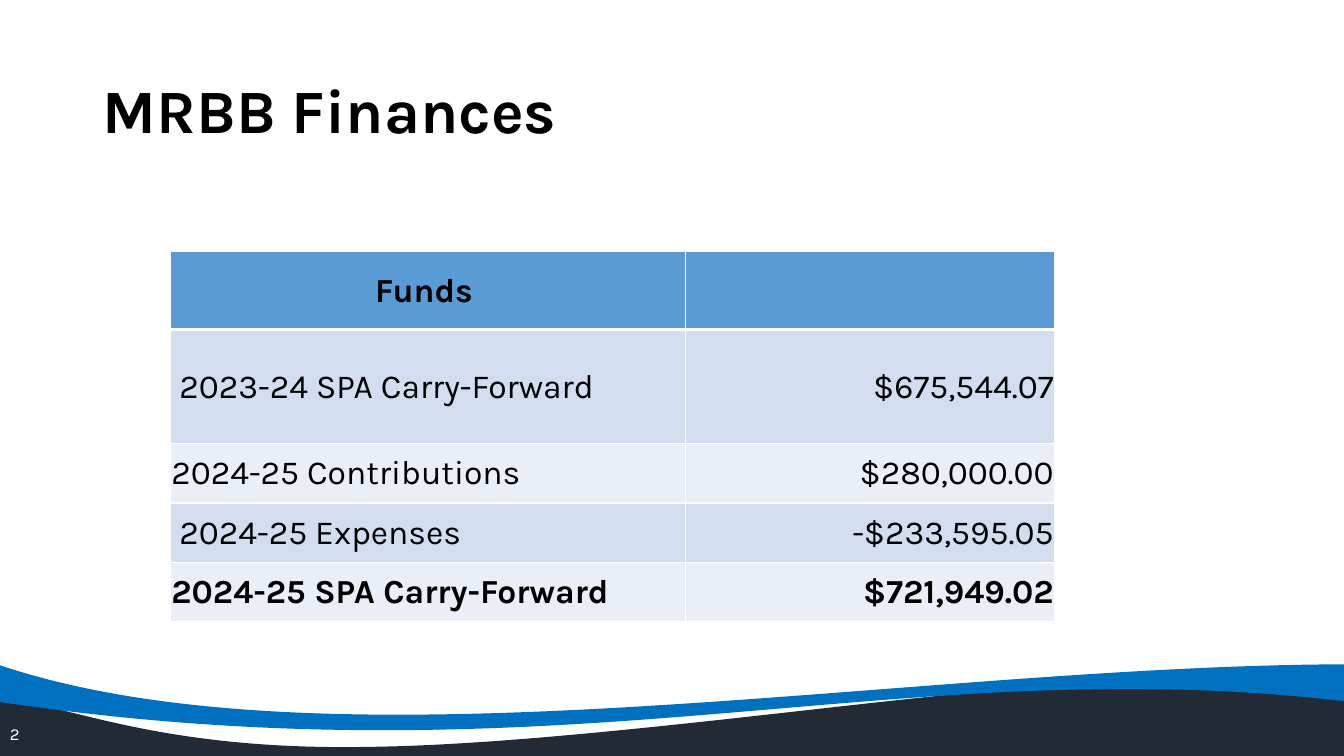
from lxml.etree import SubElement
from pptx import Presentation
from pptx.dml.color import RGBColor
from pptx.enum.text import MSO_ANCHOR, PP_ALIGN
from pptx.oxml.ns import qn
from pptx.util import Pt

PX = 9144  # 100 px to the inch
THEME = {
    "font": "Karla", "title": 44, "table": 24, "number": 12,
    "black": "000000", "white": "FFFFFF", "navy": "222A35", "blue": "0070C0",
    "header": "5B9BD5", "bands": ("D2DEEF", "EAEFF7"),
}


def add_run(p, text, size, color, bold=False):
    r = p.add_run()
    r.text = text
    r.font.name = THEME["font"]
    r.font.size = Pt(THEME[size])
    r.font.bold = bold
    r.font.color.rgb = RGBColor.from_string(THEME[color])


prs = Presentation()
prs.slide_width, prs.slide_height = 1333 * PX, 750 * PX
s = prs.slides.add_slide(prs.slide_layouts[5])

# Footer waves: box, then a start point, curves of three points and straight lines of one
waves = [
    ("navy", (-3, 660, 1339, 90), [
        [(-3, 695)],
        [(56, 692), (142, 745), (365, 741)],
        [(546, 739), (825, 699), (987, 685)],
        [(1149, 671), (1350, 648), (1336, 667)],
        [(1335, 695), (1335, 722), (1335, 750)],
        [(-2, 750)],
        [(-2, 732), (-3, 713), (-3, 695)],
    ]),
    ("blue", (-3, 659, 1339, 65), [
        [(-3, 659)],
        [(326, 771), (897, 660), (1336, 659)],
        [(1336, 696)],
        [(891, 643), (565, 781), (-3, 696)],
        [(-3, 659)],
    ]),
]
for color, (x, y, w, h), segments in waves:
    fb = s.shapes.build_freeform(x, y, scale=PX)
    fb.add_line_segments([(x + w, y), (x + w, y + h), (x, y + h)], close=True)
    wave = fb.convert_to_shape()
    wave.shadow.inherit = False
    wave.fill.solid()
    wave.fill.fore_color.rgb = RGBColor.from_string(THEME[color])
    wave.line.fill.background()

    # Curved outline inside the box
    outline = next(wave._element.iter(qn("a:path")))
    for step in list(outline):
        outline.remove(step)
    for i, seg in enumerate(segments):
        tag = "a:moveTo" if i == 0 else "a:cubicBezTo" if len(seg) == 3 else "a:lnTo"
        step = SubElement(outline, qn(tag))
        for px, py in seg:
            SubElement(step, qn("a:pt"), x=str(px - x), y=str(py - y))
    SubElement(outline, qn("a:close"))

# Title
title = s.shapes.title
title.left, title.top, title.width, title.height = 92 * PX, 40 * PX, 1150 * PX, 145 * PX
tf = title.text_frame
tf.vertical_anchor = MSO_ANCHOR.MIDDLE
p = tf.paragraphs[0]
p.alignment = PP_ALIGN.LEFT
p.line_spacing = 0.9
add_run(p, "MRBB Finances", "title", "black", True)

# Slide number
tf = s.shapes.add_textbox(0, 708 * PX, 300 * PX, 40 * PX).text_frame
tf.word_wrap = True
tf.vertical_anchor = MSO_ANCHOR.MIDDLE
add_run(tf.paragraphs[0], "2", "number", "white")

# Finance table: label, amount, row height, left inset of the label
rows = [
    ("Funds", "", 78, 1),
    ("2023-24 SPA Carry-Forward", "$675,544.07", 113, 9),
    ("2024-25 Contributions", "$280,000.00", 59, 1),
    ("2024-25 Expenses", "-$233,595.05", 59, 9),
    ("2024-25 SPA Carry-Forward", "$721,949.02", 59, 1),
]
widths = (511, 366)
tbl = s.shapes.add_table(len(rows), len(widths), 169 * PX, 249 * PX, sum(widths) * PX,
                         sum(row[2] for row in rows) * PX).table
for col, width in zip(tbl.columns, widths):
    col.width = width * PX

for i, (label, amount, height, inset) in enumerate(rows):
    tbl.rows[i].height = height * PX
    header = i == 0
    bold = header or i == len(rows) - 1
    for j, text in enumerate((label, amount)):
        cell = tbl.cell(i, j)
        cell.vertical_anchor = MSO_ANCHOR.MIDDLE
        cell.margin_left = (inset if j == 0 else 1) * PX
        cell.margin_right = (9 if header else 1) * PX
        cell.margin_top, cell.margin_bottom = PX, 0

        # White header borders, thicker below; the table style rules the other rows
        if header:
            tcPr = cell._tc.get_or_add_tcPr()
            for side, weight in (("L", 1), ("R", 1), ("T", 1), ("B", 3)):
                ln = SubElement(tcPr, qn(f"a:ln{side}"), w=str(Pt(weight)))
                fill = SubElement(ln, qn("a:solidFill"))
                SubElement(fill, qn("a:srgbClr"), val=THEME["white"])
        cell.fill.solid()
        shade = THEME["header"] if header else THEME["bands"][(i - 1) % 2]
        cell.fill.fore_color.rgb = RGBColor.from_string(shade)

        p = cell.text_frame.paragraphs[0]
        p.alignment = PP_ALIGN.CENTER if header else (PP_ALIGN.LEFT, PP_ALIGN.RIGHT)[j]
        if text:
            add_run(p, text, "table", "black", bold)

prs.save("out.pptx")
